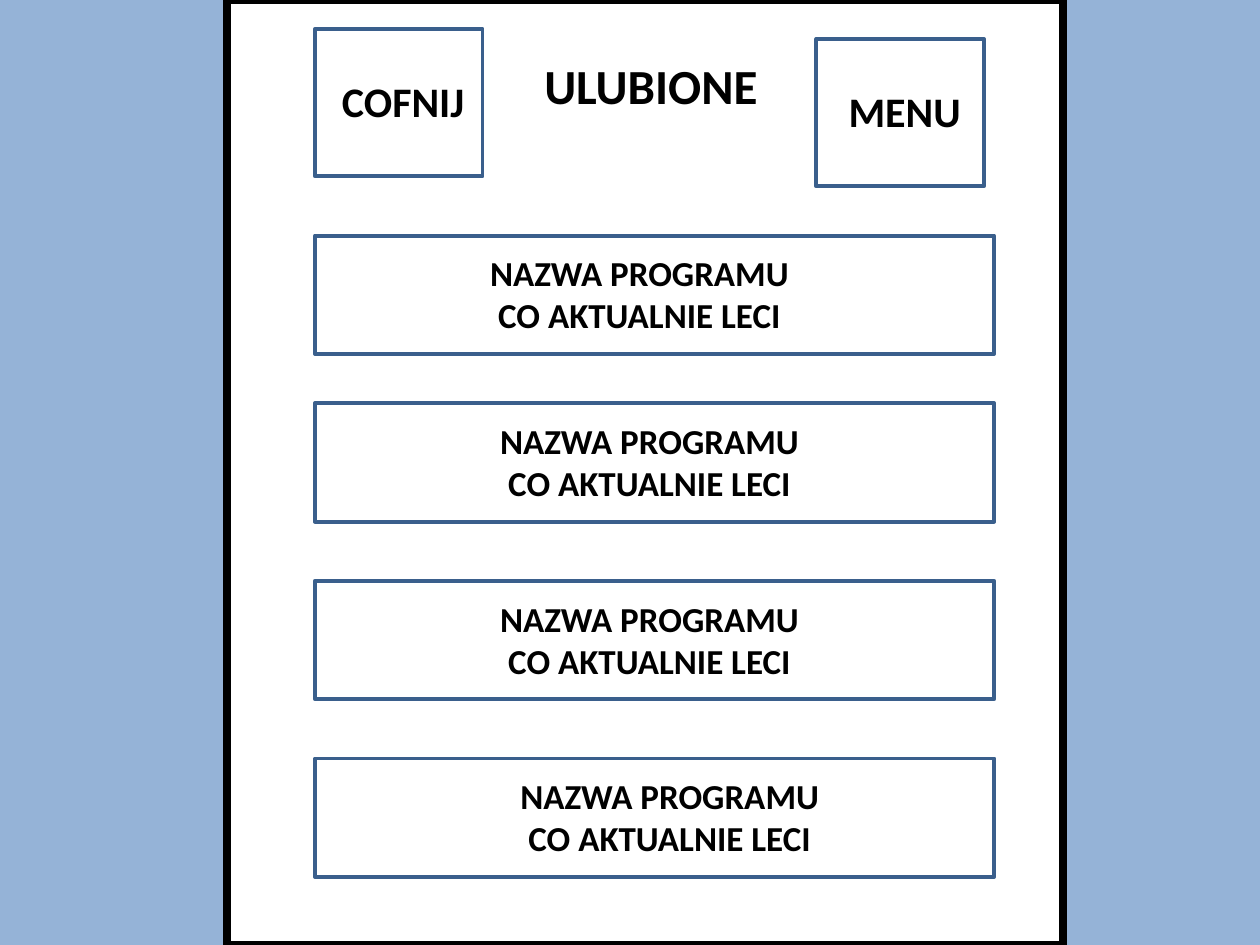
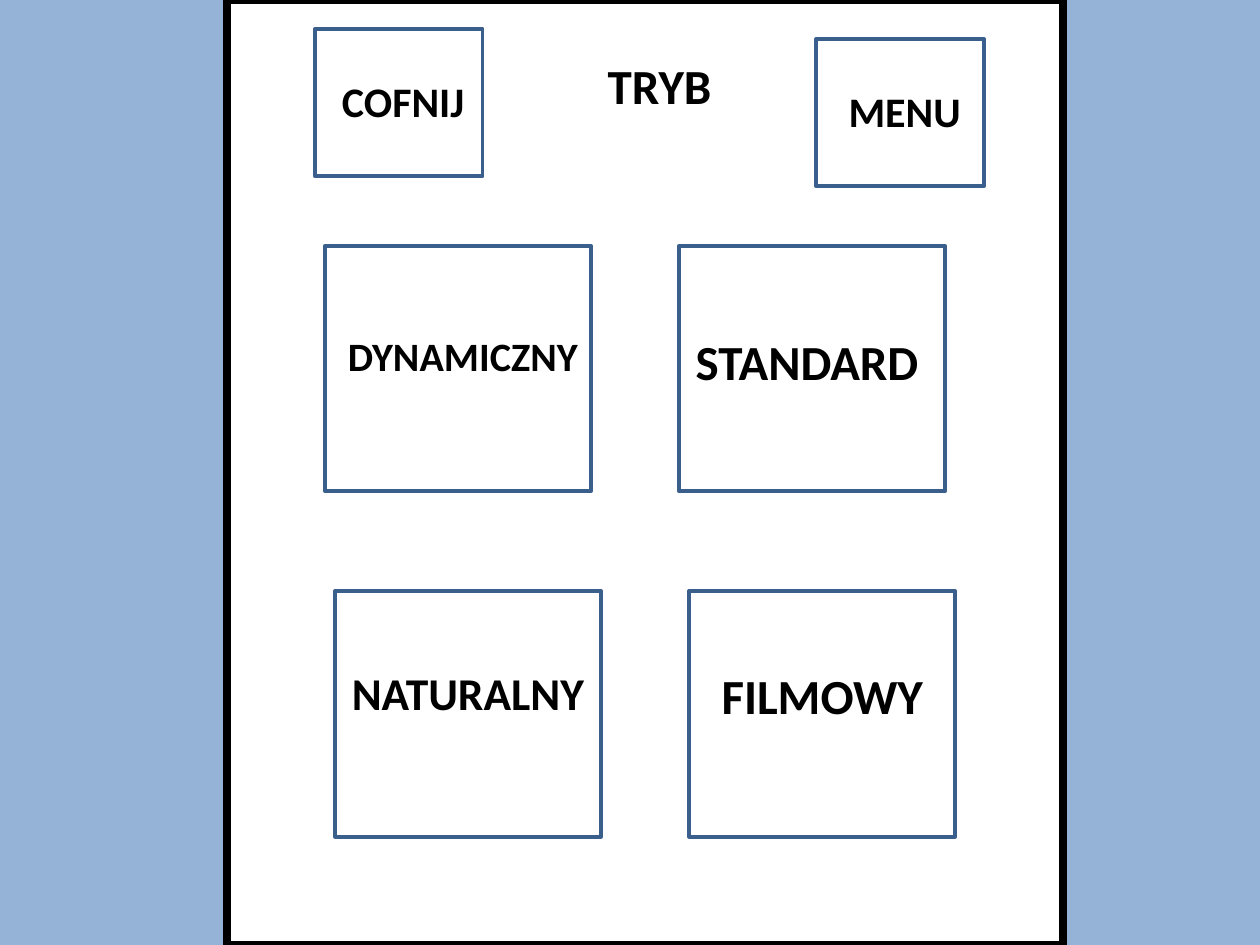
from pptx import Presentation
from pptx.dml.color import RGBColor
from pptx.enum.shapes import MSO_SHAPE as Shape
from pptx.enum.text import MSO_ANCHOR as Anchor, MSO_AUTO_SIZE as AutoSize, PP_ALIGN as Align
from pptx.util import Inches, Pt

COLORS = {"background": "95B3D7", "panel": "FFFFFF", "frame": "000000",
          "button": "3A5F8C", "text": "000000"}
FONT = "Calibri"


def rgb(name):
    return RGBColor.from_string(COLORS[name])


class Screens:
    """Draws app screens: a framed panel with a title and outlined buttons."""

    def __init__(self):
        self.prs = Presentation()
        self.prs.slide_width, self.prs.slide_height = Inches(10), Inches(7.5)
        fill = self.prs.slide_master.background.fill
        fill.solid()
        fill.fore_color.rgb = rgb("background")
        self.s = None

    def rect(self, x, y, w, h, line="button", width=2.25, fill=None):
        sp = self.s.shapes.add_shape(Shape.RECTANGLE, Inches(x), Inches(y), Inches(w), Inches(h))
        sp.shadow.inherit = False
        if fill:
            sp.fill.solid()
            sp.fill.fore_color.rgb = rgb(fill)
        else:
            sp.fill.background()
        sp.line.color.rgb = rgb(line)
        sp.line.width = Pt(width)
        return sp

    def set_text(self, sp, text, size, align=Align.CENTER):
        tf = sp.text_frame
        tf.text = text
        tf.word_wrap = True
        tf.auto_size = AutoSize.SHAPE_TO_FIT_TEXT
        tf.vertical_anchor = Anchor.TOP
        for p in tf.paragraphs:
            p.alignment = align
            p.font.name, p.font.size, p.font.bold = FONT, Pt(size), True
            p.font.color.rgb = rgb("text")

    def label(self, text, x, y, w, h, size):
        sp = self.s.shapes.add_textbox(Inches(x), Inches(y), Inches(w), Inches(h))
        self.set_text(sp, text, size)

    def screen(self, title, align=Align.CENTER):
        """Start a slide with the panel, title and navigation buttons."""
        self.s = self.prs.slides.add_slide(self.prs.slide_layouts.get_by_name("Title Only"))
        panel = self.rect(1.8, 0, 6.64, 7.5, "frame", 4.5, "panel")
        sp = self.s.shapes.title
        sp.element.addprevious(panel.element)  # keep the panel behind the title
        sp.left, sp.top, sp.width, sp.height = Inches(4.22), Inches(0.39), Inches(2.03), Inches(0.57)
        self.set_text(sp, title, 28, align)
        for text, x, y in (("COFNIJ", 2.5, 0.23), ("MENU", 6.48, 0.31)):
            self.rect(x, y, 1.33, 1.17)
            self.label(text, x - 0.08, y + 0.32, 1.56, 0.5, 24)

    def program_row(self, y, label_x):
        self.rect(2.5, y, 5.39, 0.94)
        self.label("NAZWA PROGRAMU\nCO AKTUALNIE LECI", label_x, y + 0.08, 3.75, 0.77, 20)

    def mode_tile(self, text, x, y, label_x, label_y, label_w, size):
        self.rect(x, y, 2.11, 1.95)
        self.label(text, label_x, label_y, label_w, 0.57, size)


def main():
    deck = Screens()

    deck.screen("ULUBIONE", Align.LEFT)
    for y, label_x in ((1.87, 3.2), (3.2, 3.28), (4.61, 3.28), (6.02, 3.44)):
        deck.program_row(y, label_x)

    deck.screen("TRYB")
    deck.mode_tile("DYNAMICZNY", 2.58, 1.95, 2.66, 2.58, 2.03, 23)
    deck.mode_tile("STANDARD", 5.39, 1.95, 5.39, 2.58, 2.03, 28)
    deck.mode_tile("NATURALNY", 2.66, 4.69, 2.66, 5.23, 2.11, 26)
    deck.mode_tile("FILMOWY", 5.47, 4.69, 5.55, 5.23, 1.95, 28)

    deck.prs.save("out.pptx")


if __name__ == "__main__":
    main()
